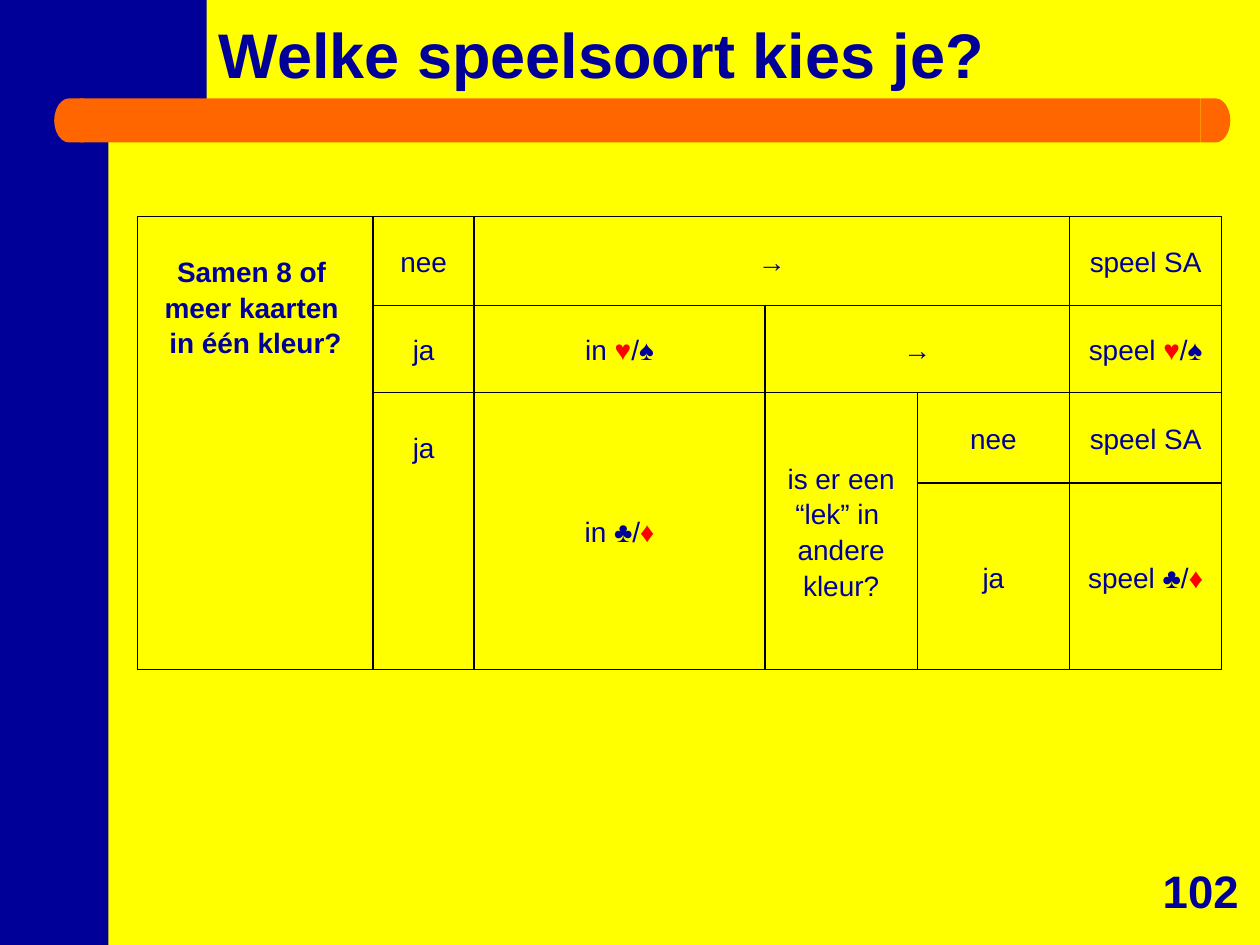
from itertools import groupby

from lxml import etree
from pptx import Presentation
from pptx.dml.color import RGBColor
from pptx.enum.shapes import MSO_SHAPE
from pptx.enum.text import MSO_ANCHOR, PP_ALIGN
from pptx.oxml.ns import qn
from pptx.util import Pt

RECT, DELAY = MSO_SHAPE.RECTANGLE, MSO_SHAPE.FLOWCHART_DELAY
TOP, MIDDLE, BOTTOM = MSO_ANCHOR.TOP, MSO_ANCHOR.MIDDLE, MSO_ANCHOR.BOTTOM
LEFT, CENTER = PP_ALIGN.LEFT, PP_ALIGN.CENTER

COLORS = {"yellow": "FFFF00", "navy": "000099", "orange": "FF6600",
          "red": "FF0000", "black": "000000"}
FONT = "Arial"
RED_SUITS = "♥♦"
BLANK_LINE = 20.5

COL_WIDTHS = [134.6, 57.6, 166.3, 87, 87, 87]
ROW_HEIGHTS = [50.7, 49.7, 51.8, 106.6]
CELLS = [
    (0, 0, 4, 1, "Samen 8 of \nmeer kaarten \nin één kleur?", TOP, True),
    (0, 1, 1, 1, "nee", MIDDLE, False),
    (0, 2, 1, 3, "→", MIDDLE, True),
    (0, 5, 1, 1, "speel SA", MIDDLE, False),
    (1, 1, 1, 1, "ja", MIDDLE, False),
    (1, 2, 1, 1, "in ♥/♠", MIDDLE, False),
    (1, 3, 1, 2, "→", MIDDLE, True),
    (1, 5, 1, 1, "speel ♥/♠", MIDDLE, False),
    (2, 1, 2, 1, "ja", TOP, False),
    (2, 2, 2, 1, "in ♣/♦", MIDDLE, False),
    (2, 3, 2, 1, "is er een “lek” in \nandere kleur?", MIDDLE, False),
    (2, 4, 1, 1, "nee", MIDDLE, False),
    (2, 5, 1, 1, "speel SA", MIDDLE, False),
    (3, 4, 1, 1, "ja", MIDDLE, False),
    (3, 5, 1, 1, "speel ♣/♦", MIDDLE, False),
]


def rgb(name):
    return RGBColor.from_string(COLORS[name])


class Deck:
    def __init__(self, prs):
        self.slide = prs.slides.add_slide(prs.slide_layouts[6])
        fill = self.slide.background.fill
        fill.solid()
        fill.fore_color.rgb = rgb("yellow")

    def paint(self, sp, color):
        sp.shadow.inherit = False
        sp.fill.solid()
        sp.fill.fore_color.rgb = rgb(color)
        sp.line.fill.background()

    def shape(self, kind, x, y, w, h, color, rotation=0):
        sp = self.slide.shapes.add_shape(kind, Pt(x), Pt(y), Pt(w), Pt(h))
        sp.rotation = rotation
        self.paint(sp, color)

    def outline(self, points, color):
        builder = self.slide.shapes.build_freeform(*points[0], scale=Pt(1))
        builder.add_line_segments(points[1:], close=True)
        self.paint(builder.convert_to_shape(), color)

    def set_text(self, tf, text, size, bold, align, spacing):
        p = tf.paragraphs[0]
        p.alignment = align
        p.line_spacing = spacing
        p.font.name = FONT
        p.font.size = Pt(size)
        p.font.bold = bold
        p.font.color.rgb = rgb("navy")
        for i, line in enumerate(text.split("\n")):
            if i:
                p.add_line_break()
            for is_red, chars in groupby(line, lambda ch: ch in RED_SUITS):
                r = p.add_run()
                r.text = "".join(chars)
                if is_red:
                    r.font.color.rgb = rgb("red")

    def text(self, x, y, w, h, text, size, align, spacing=1.0):
        tf = self.slide.shapes.add_textbox(Pt(x), Pt(y), Pt(w), Pt(h)).text_frame
        tf.word_wrap = True
        tf.vertical_anchor = BOTTOM
        self.set_text(tf, text, size, True, align, spacing)

    def border(self, cell):
        tc_pr = cell._tc.get_or_add_tcPr()
        for side in ("lnL", "lnR", "lnT", "lnB"):
            ln = etree.SubElement(tc_pr, qn(f"a:{side}"), w=str(Pt(1)))
            fill = etree.SubElement(ln, qn("a:solidFill"))
            etree.SubElement(fill, qn("a:srgbClr"), val=COLORS["black"])

    def table(self, x, y, widths, heights, cells):
        frame = self.slide.shapes.add_table(
            len(heights), len(widths), Pt(x), Pt(y), Pt(sum(widths)), Pt(sum(heights)))
        table = frame.table
        table.first_row = table.horz_banding = False
        for column, width in zip(table.columns, widths):
            column.width = Pt(width)
        for row, height in zip(table.rows, heights):
            row.height = Pt(height)
        for cell in table.iter_cells():
            self.border(cell)
            cell.fill.background()
        for row, col, rows, cols, text, anchor, bold in cells:
            cell = table.cell(row, col)
            if rows * cols > 1:
                cell.merge(table.cell(row + rows - 1, col + cols - 1))
            cell.margin_left = cell.margin_right = Pt(1.5)
            cell.margin_top = Pt(BLANK_LINE if anchor == TOP else 0)
            cell.margin_bottom = Pt(0)
            cell.vertical_anchor = anchor
            self.set_text(cell.text_frame, text, 16, bold, CENTER, 1.15)


def main():
    prs = Presentation()
    prs.slide_width, prs.slide_height = Pt(720), Pt(540)
    deck = Deck(prs)
    deck.shape(RECT, 0, 0, 62, 540, "navy")
    deck.outline([(20, 0), (118, 0), (118, 60), (42, 60), (37, 61),
                  (34, 66), (32, 75), (31, 92), (20, 92)], "navy")
    deck.shape(RECT, 45.5, 56.2, 640.7, 25.2, "orange")
    deck.shape(DELAY, 31, 56.2, 17, 25.2, "orange", rotation=180)
    deck.shape(DELAY, 686.2, 56.2, 16.8, 25.2, "orange")
    deck.text(652.3, 489.6, 67.7, 38.2, "102", 26, CENTER)
    deck.text(118, 0, 568, 56.2, "Welke speelsoort kies je?", 36, LEFT, 0.9)
    deck.table(78.7, 123.8, COL_WIDTHS, ROW_HEIGHTS, CELLS)
    prs.save("out.pptx")


if __name__ == "__main__":
    main()
